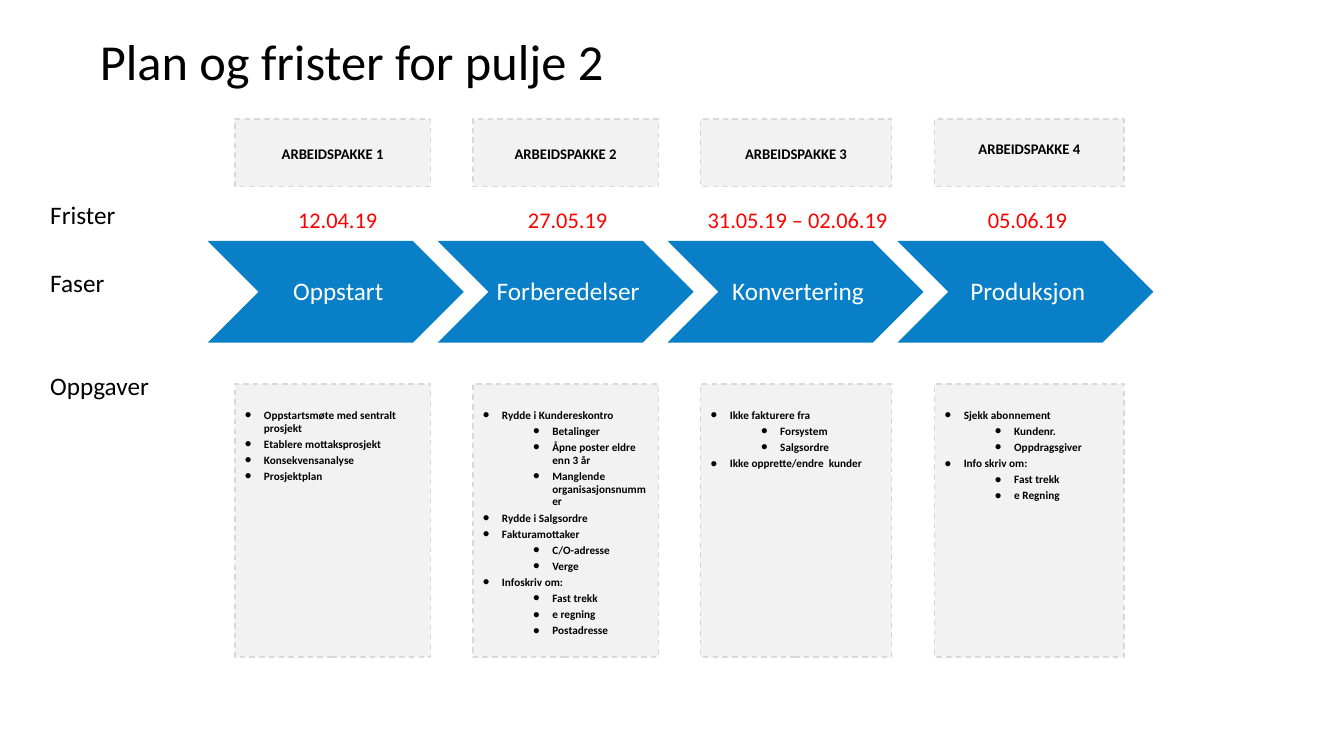
from lxml import etree
from pptx import Presentation
from pptx.dml.color import RGBColor
from pptx.enum.dml import MSO_LINE
from pptx.enum.shapes import MSO_SHAPE
from pptx.enum.text import MSO_ANCHOR, PP_ALIGN
from pptx.oxml.ns import qn
from pptx.util import Inches, Pt

RECTANGLE, CHEVRON = MSO_SHAPE.RECTANGLE, MSO_SHAPE.CHEVRON
LEFT, CENTER = PP_ALIGN.LEFT, PP_ALIGN.CENTER
TOP, MIDDLE, BOTTOM = MSO_ANCHOR.TOP, MSO_ANCHOR.MIDDLE, MSO_ANCHOR.BOTTOM
DASH = MSO_LINE.DASH

FONT = "Calibri"
BLACK, WHITE, RED = "000000", "FFFFFF", "FF0000"
BLUE, PALE_GREY, GREY = "097FC8", "F2F2F2", "D9D9D9"

CHEVRON_LEFT, CHEVRON_PITCH = 2.06, 2.28
PACKAGE_TOP, TASKS_TOP, TASKS_BOTTOM = 1.18, 3.81, 6.52

# Box left, box width, package text inset, phase, deadline, tasks as (level, text)
PHASES = [
    (2.33, 1.94, 0.27, "Oppstart", "12.04.19", [
        (0, "Oppstartsmøte med sentralt prosjekt"),
        (0, "Etablere mottaksprosjekt"),
        (0, "Konsekvensanalyse"),
        (0, "Prosjektplan"),
    ]),
    (4.69, 1.84, 0.27, "Forberedelser", "27.05.19", [
        (0, "Rydde i Kundereskontro"),
        (1, "Betalinger"),
        (1, "Åpne poster eldre enn 3 år"),
        (1, "Manglende organisasjonsnummer"),
        (0, "Rydde i Salgsordre"),
        (0, "Fakturamottaker"),
        (1, "C/O-adresse"),
        (1, "Verge"),
        (0, "Infoskriv om:"),
        (1, "Fast trekk"),
        (1, "e regning"),
        (1, "Postadresse"),
    ]),
    (6.95, 1.89, 0.27, "Konvertering", "31.05.19 – 02.06.19", [
        (0, "Ikke fakturere fra"),
        (1, "Forsystem"),
        (1, "Salgsordre"),
        (0, "Ikke opprette/endre  kunder"),
    ]),
    (9.27, 1.88, 0.22, "Produksjon", "05.06.19", [
        (0, "Sjekk abonnement"),
        (1, "Kundenr."),
        (1, "Oppdragsgiver"),
        (0, "Info skriv om:"),
        (1, "Fast trekk"),
        (1, "e Regning"),
    ]),
]
ROW_LABELS = [("Frister", 1.93), ("Faser", 2.6), ("Oppgaver", 3.62)]


def color(hex_string):
    return RGBColor.from_string(hex_string)


def format_paragraph(paragraph, size, font_color=BLACK, bold=False, alignment=LEFT, spacing=1.0):
    paragraph.alignment = alignment
    paragraph.line_spacing = spacing
    for run in paragraph.runs:
        run.font.name = FONT
        run.font.size = Pt(size)
        run.font.bold = bold
        run.font.color.rgb = color(font_color)


def add_bullet(paragraph, level):
    paragraph.level = level
    properties = paragraph._p.get_or_add_pPr()
    properties.set("marL", str(Inches(0.19 + 0.5 * level)))
    properties.set("indent", str(-Inches(0.19)))
    etree.SubElement(properties, qn("a:buSzPct")).set("val", "170000")
    etree.SubElement(properties, qn("a:buFont")).set("typeface", "Arial")
    etree.SubElement(properties, qn("a:buChar")).set("char", "•")


def add_filled_shape(slide, kind, left, top, width, height, fill):
    shape = slide.shapes.add_shape(
        kind, Inches(left), Inches(top), Inches(width), Inches(height))
    shape.shadow.inherit = False
    shape.fill.solid()
    shape.fill.fore_color.rgb = color(fill)
    shape.line.fill.background()
    return shape


def add_dashed_box(slide, left, top, width, height, text_inset):
    box = add_filled_shape(slide, RECTANGLE, left, top, width, height, PALE_GREY)
    box.line.color.rgb = color(GREY)
    box.line.width = Pt(1)
    box.line.dash_style = DASH
    box.text_frame.vertical_anchor = TOP
    box.text_frame.margin_top = Inches(text_inset)
    return box.text_frame


def add_label(slide, text, left, top, width, height, size, font_color=BLACK,
              alignment=LEFT, anchor=TOP):
    label = slide.shapes.add_textbox(
        Inches(left), Inches(top), Inches(width), Inches(height))
    frame = label.text_frame
    frame.word_wrap = True
    frame.vertical_anchor = anchor
    frame.text = text
    format_paragraph(frame.paragraphs[0], size, font_color, alignment=alignment)


def add_title(slide, text):
    title = slide.shapes.title
    title.left, title.top = Inches(0.89), Inches(-0.49)
    title.width, title.height = Inches(10.7), Inches(1.45)
    title.text_frame.text = text
    title.text_frame.vertical_anchor = BOTTOM
    format_paragraph(title.text_frame.paragraphs[0], 36, spacing=0.9)


def add_phase_arrow(slide, left, text):
    arrow = add_filled_shape(slide, CHEVRON, left, 2.39, 2.54, 1.01, BLUE)
    frame = arrow.text_frame
    frame.margin_left = Inches(0.08)
    frame.margin_top = frame.margin_right = frame.margin_bottom = Inches(0.03)
    frame.vertical_anchor = MIDDLE
    frame.text = text
    format_paragraph(frame.paragraphs[0], 18, WHITE, alignment=CENTER, spacing=0.9)


def add_package(slide, left, width, text_inset, text):
    frame = add_dashed_box(slide, left, PACKAGE_TOP, width, 0.67, text_inset)
    frame.text = text
    format_paragraph(frame.paragraphs[0], 10.5, bold=True, alignment=CENTER, spacing=0.95)


def add_tasks(slide, left, width, tasks):
    frame = add_dashed_box(slide, left, TASKS_TOP, width, TASKS_BOTTOM - TASKS_TOP, 0.25)
    frame.text = "\n".join(text for _, text in tasks)
    for paragraph, (level, _) in zip(frame.paragraphs, tasks):
        format_paragraph(paragraph, 8, bold=True, spacing=0.95)
        paragraph.space_after = Pt(2.4)
        add_bullet(paragraph, level)


def main():
    presentation = Presentation()
    presentation.slide_width, presentation.slide_height = Inches(13.33), Inches(7.5)
    slide = presentation.slides.add_slide(presentation.slide_layouts[5])
    add_title(slide, "Plan og frister for pulje 2")
    for text, top in ROW_LABELS:
        add_label(slide, text, 0.4, top, 1.53, 0.4, 18)
    for index, (left, width, inset, phase, deadline, tasks) in enumerate(PHASES):
        arrow_left = CHEVRON_LEFT + index * CHEVRON_PITCH
        add_package(slide, left, width, inset, f"ARBEIDSPAKKE {index + 1}")
        add_label(slide, deadline, arrow_left + 0.17, 2.02, 2.24, 0.31, 16, RED, CENTER, MIDDLE)
        add_phase_arrow(slide, arrow_left, phase)
        add_tasks(slide, left, width, tasks)
    presentation.save("out.pptx")


if __name__ == "__main__":
    main()
